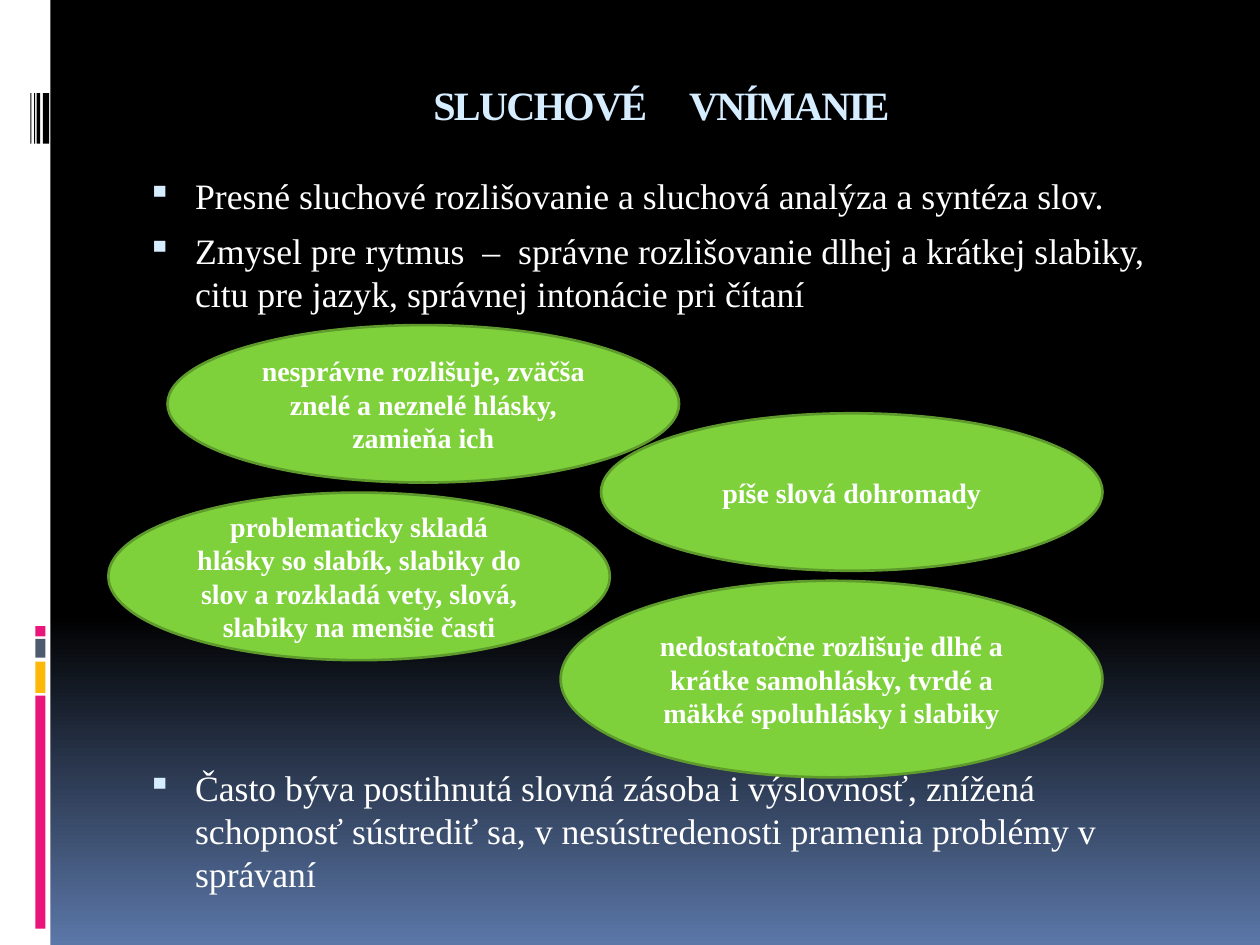
from dataclasses import dataclass

from lxml.etree import SubElement as Sub
from pptx import Presentation
from pptx.dml.color import RGBColor as Rgb
from pptx.enum.shapes import MSO_SHAPE as Form
from pptx.enum.text import MSO_ANCHOR as Anchor, PP_ALIGN as Align
from pptx.oxml.ns import qn
from pptx.util import Inches, Pt


@dataclass(frozen=True)
class Theme:
    """Colours and type sizes of the slide."""
    font: str = "Times New Roman"
    white: str = "FFFFFF"
    black: str = "000000"
    blue: str = "5B77A8"
    pale: str = "D6ECFF"
    pink: str = "EA157A"
    gold: str = "FEB80A"
    slate: str = "4E5B6F"
    green: str = "7FD13B"
    edge: str = "5E9B2C"
    head: float = 23
    body: float = 20.4
    note: float = 16


class Deck:
    """Holds the style and the current slide."""

    def __init__(self, theme):
        """Open a deck with one title-only slide."""
        self.theme = theme
        self.prs = Presentation()
        self.prs.slide_width, self.prs.slide_height = Inches(10), Inches(7.5)
        self.slide = self.prs.slides.add_slide(self.prs.slide_layouts[5])

    def back(self):
        """Fade the background from black to blue."""
        fill = self.slide.background.fill
        fill.gradient()
        fill.gradient_angle = 270
        stops = fill._fill._gradFill.find(qn("a:gsLst"))
        for stop in list(stops):
            stops.remove(stop)
        tones = (0, self.theme.black), (65, self.theme.black), (100, self.theme.blue)
        for pos, tone in tones:
            stop = Sub(stops, qn("a:gs"), pos=str(pos * 1000))
            Sub(stop, qn("a:srgbClr"), val=tone)

    def shape(self, form, box, fill, edge=None):
        """Add a filled preset shape."""
        item = self.slide.shapes.add_shape(form, *map(Inches, box))
        item.shadow.inherit = False
        item.fill.solid()
        item.fill.fore_color.rgb = Rgb.from_string(fill)
        if edge:
            item.line.color.rgb = Rgb.from_string(edge)
            item.line.width = Pt(1.5)
        else:
            item.line.fill.background()
        return item

    def run(self, para, text, size, tone, bold=False, track=0):
        """Add one styled run."""
        run = para.add_run()
        run.text = text
        font = run.font
        font.name, font.size, font.bold = self.theme.font, Pt(size), bold
        font.color.rgb = Rgb.from_string(tone)
        if track:
            run._r.get_or_add_rPr().set("spc", str(track * 100))

    def title(self, box, parts):
        """Place the title and its tracked runs."""
        item = self.slide.shapes.title
        item.left, item.top, item.width, item.height = map(Inches, box)
        frame = item.text_frame
        frame.vertical_anchor = Anchor.TOP
        frame.margin_top = Inches(0.08)
        para = frame.paragraphs[0]
        para.alignment = Align.CENTER
        for text, track in parts:
            self.run(para, text, self.theme.head, self.theme.pale, True, track)

    def bullets(self, box, items):
        """Add a bulleted list of (space before, text) items."""
        frame = self.slide.shapes.add_textbox(*map(Inches, box)).text_frame
        frame.word_wrap = True
        for num, (gap, text) in enumerate(items):
            para = frame.add_paragraph() if num else frame.paragraphs[0]
            para.space_before = Pt(gap)
            props = para._p.get_or_add_pPr()
            props.set("marL", str(Inches(0.45)))
            props.set("indent", str(Inches(-0.38)))
            Sub(Sub(props, qn("a:buClr")), qn("a:srgbClr"), val=self.theme.pale)
            Sub(props, qn("a:buSzPct"), val="95000")
            Sub(props, qn("a:buChar"), char="▪")
            self.run(para, text, self.theme.body, self.theme.white)

    def bubble(self, box, text):
        """Add a green ellipse with centred bold text."""
        look = self.theme
        frame = self.shape(Form.OVAL, box, look.green, look.edge).text_frame
        frame.word_wrap = True
        frame.vertical_anchor = Anchor.MIDDLE
        para = frame.paragraphs[0]
        para.alignment = Align.CENTER
        self.run(para, text, look.note, look.white, True)


def main():
    """Build and save the slide."""
    look = Theme()
    deck = Deck(look)
    deck.back()
    deck.shape(Form.RECTANGLE, (0, 0, 0.4, 7.5), look.white)
    blocks = ((5.52, 1.85, look.pink), (5.25, 0.25, look.gold),
              (5.07, 0.15, look.slate), (4.97, 0.08, look.pink))
    for top, high, tone in blocks:
        deck.shape(Form.RECTANGLE, (0.28, top, 0.08, high), tone)
    for left, wide in ((0.34, 0.05), (0.29, 0.03), (0.27, 0.01), (0.24, 0.01)):
        deck.shape(Form.RECTANGLE, (left, 0.74, wide, 0.4), look.black)

    deck.title((1, 0.56, 8.5, 0.61),
               (("SLUCHOVÉ", -1), (" ", 18), ("VNÍMANIE", -1)))
    deck.bullets((1, 1.33, 8.5, 5.62), (
        (7, "Presné sluchové rozlišovanie a sluchová analýza a syntéza slov."),
        (7, "Zmysel pre rytmus  –  správne rozlišovanie dlhej a krátkej slabiky, "
            "citu pre jazyk, správnej intonácie pri čítaní"),
        (258, "Často býva postihnutá slovná zásoba i výslovnosť, znížená schopnosť "
              "sústrediť sa, v nesústredenosti pramenia problémy v správaní")))
    bubbles = (
        ((1.33, 2.58, 4.06, 1.25),
         "nesprávne rozlišuje, zväčša znelé a neznelé hlásky, zamieňa ich"),
        ((4.77, 3.28, 3.98, 1.25), "píše slová dohromady"),
        ((0.86, 3.91, 3.98, 1.33),
         "problematicky skladá hlásky so slabík, slabiky do slov a rozkladá "
         "vety, slová, slabiky na menšie časti"),
        ((4.45, 4.61, 4.3, 1.56),
         "nedostatočne rozlišuje dlhé a krátke samohlásky, tvrdé a mäkké "
         "spoluhlásky i slabiky"))
    for box, text in bubbles:
        deck.bubble(box, text)
    deck.prs.save("out.pptx")


if __name__ == "__main__":
    main()
